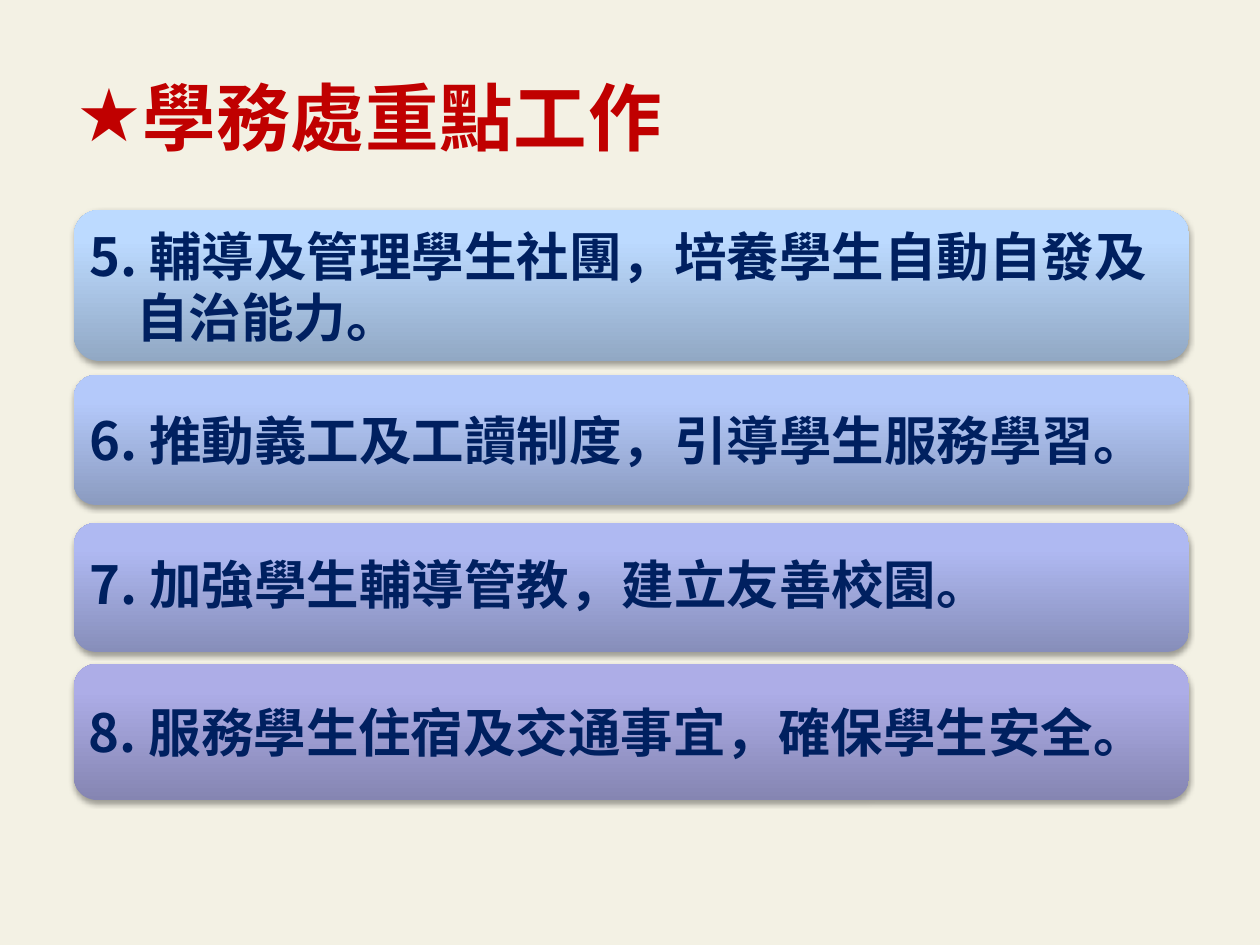
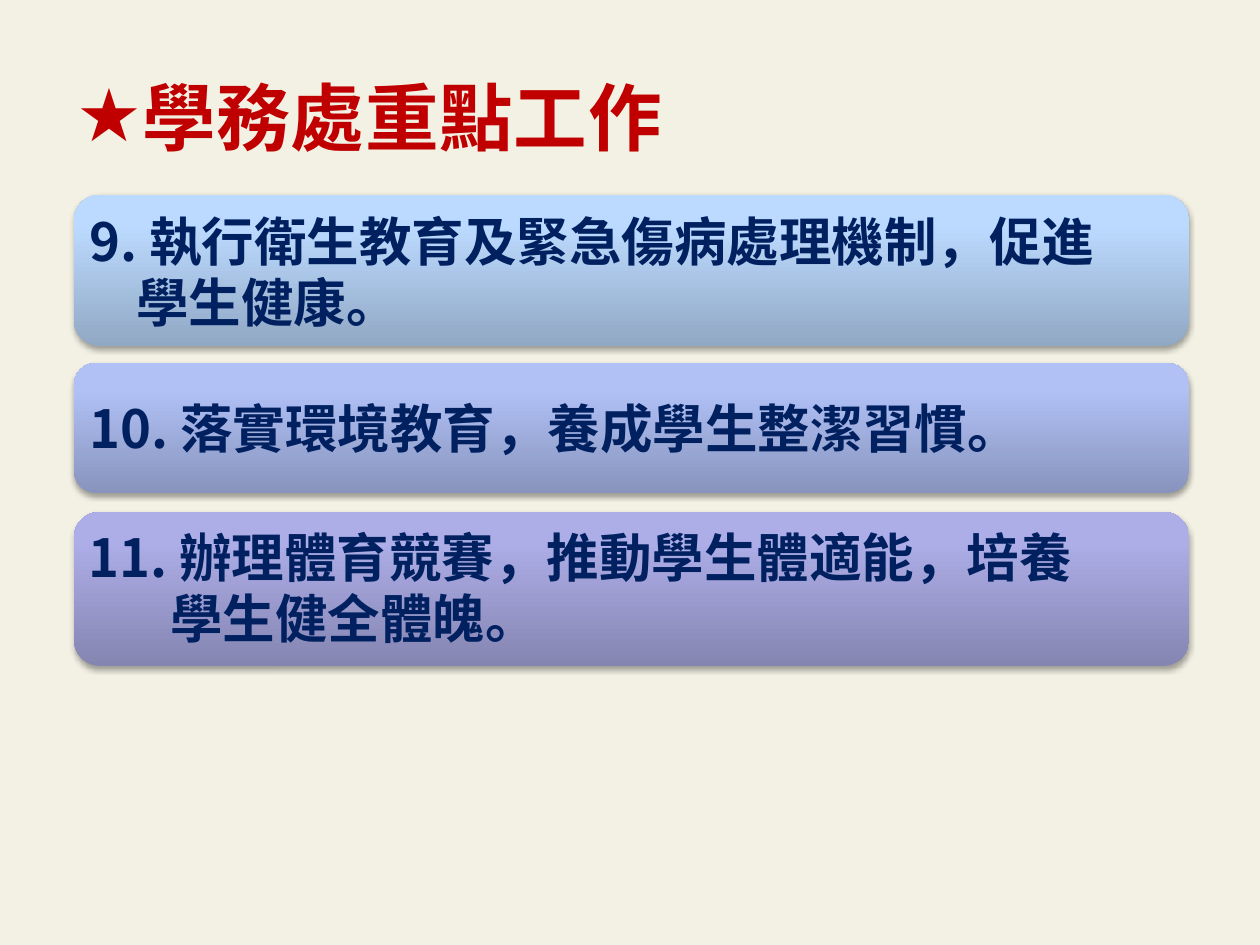
from lxml import etree
from pptx import Presentation
from pptx.dml.color import RGBColor
from pptx.enum.shapes import MSO_SHAPE
from pptx.enum.text import MSO_ANCHOR, MSO_AUTO_SIZE, PP_ALIGN
from pptx.oxml import parse_xml
from pptx.oxml.ns import nsdecls, qn
from pptx.util import Pt

ROUNDED = MSO_SHAPE.ROUNDED_RECTANGLE
TOP, MIDDLE = MSO_ANCHOR.TOP, MSO_ANCHOR.MIDDLE
LEFT = PP_ALIGN.LEFT
FIT_SHAPE = MSO_AUTO_SIZE.SHAPE_TO_FIT_TEXT

EMU_PER_PX = 914400 / 126
FONT = "Noto Sans CJK SC"
CREAM = RGBColor(0xF3, 0xF1, 0xE4)
RED = RGBColor(0xC0, 0x00, 0x00)
NAVY = RGBColor(0x00, 0x20, 0x60)
BLACK = RGBColor(0x00, 0x00, 0x00)
SKY = (RGBColor(0x91, 0xA8, 0xC4), RGBColor(0xBC, 0xDA, 0xFF), RGBColor(0xBE, 0xDB, 0xFF))
BLUE = (RGBColor(0x8B, 0x9B, 0xC0), RGBColor(0xB4, 0xC9, 0xFA), RGBColor(0xB3, 0xC9, 0xFC))
CORNFLOWER = (RGBColor(0x88, 0x94, 0xBD), RGBColor(0xB1, 0xC1, 0xF6), RGBColor(0xB0, 0xC1, 0xF8))
PERIWINKLE = (RGBColor(0x87, 0x8E, 0xBA), RGBColor(0xAF, 0xB9, 0xF2), RGBColor(0xAE, 0xB9, 0xF4))
LAVENDER = (RGBColor(0x85, 0x85, 0xB2), RGBColor(0xAD, 0xAD, 0xE7), RGBColor(0xAC, 0xAC, 0xE9))

TITLE = "學務處重點工作"
TITLE_BOX = (64, 66, 617, 102)
TITLE_HANG = 63
BAR_LEFT, BAR_WIDTH = 74, 1115
BAR_INSET = 15
CORNER_INSET = 0.049
LINE_SPACING = Pt(35)

# Each bar: top, height, gradient, lines, indent of the second line, line spacing
PAGES = [
    [
        (210, 151, SKY, ["5. 輔導及管理學生社團，培養學生自動自發及", "自治能力。"], 47, LINE_SPACING),
        (375, 130, BLUE, ["6. 推動義工及工讀制度，引導學生服務學習。"], 0, LINE_SPACING),
        (523, 129, PERIWINKLE, ["7. 加強學生輔導管教，建立友善校園。"], 0, 0.9),
        (664, 136, LAVENDER, ["8. 服務學生住宿及交通事宜，確保學生安全。"], 0, LINE_SPACING),
    ],
    [
        (195, 151, SKY, ["9. 執行衛生教育及緊急傷病處理機制，促進", "學生健康。"], 47, LINE_SPACING),
        (363, 130, CORNFLOWER, ["10. 落實環境教育，養成學生整潔習慣。"], 0, LINE_SPACING),
        (512, 154, LAVENDER, ["11. 辦理體育競賽，推動學生體適能，培養", "學生健全體魄。"], 82, LINE_SPACING),
    ],
]


def px(length):
    """Turn pixels into EMU."""
    return round(length * EMU_PER_PX)


def shadow_effect(blur, distance, opacity):
    """Return a black shadow that falls straight down, with lengths in points."""
    return parse_xml(
        f'<a:effectLst {nsdecls("a")}><a:outerShdw blurRad="{Pt(blur)}" dist="{Pt(distance)}" '
        f'dir="5400000" algn="t" rotWithShape="0"><a:srgbClr val="{BLACK}">'
        f'<a:alpha val="{opacity * 1000}"/></a:srgbClr></a:outerShdw></a:effectLst>'
    )


def gradient_fill(colours):
    """Return a vertical gradient that starts at the bottom."""
    stops = "".join(
        f'<a:gs pos="{position * 1000}"><a:srgbClr val="{colour}"/></a:gs>'
        for position, colour in zip((0, 80, 100), colours)
    )
    return parse_xml(
        f'<a:gradFill {nsdecls("a")} rotWithShape="1"><a:gsLst>{stops}</a:gsLst>'
        f'<a:lin ang="16200000" scaled="0"/></a:gradFill>'
    )


def style_run(span, size, colour):
    """Give a run the bold deck font for Latin and East Asian letters."""
    span.font.name = FONT
    span.font.size = Pt(size)
    span.font.bold = True
    span.font.color.rgb = colour
    east_asian = etree.SubElement(span.font._element, qn("a:ea"))
    east_asian.set("typeface", FONT)


def add_title(page, box):
    """Add the red starred heading with its hard shadow."""
    frame = page.shapes.add_textbox(*map(px, box)).text_frame
    frame.word_wrap = False
    frame.auto_size = FIT_SHAPE
    para = frame.paragraphs[0]
    para.text = TITLE
    properties = para._p.get_or_add_pPr()
    properties.set("marL", str(px(TITLE_HANG)))
    properties.set("indent", str(-px(TITLE_HANG)))
    etree.SubElement(properties, qn("a:buFont")).set("typeface", "Arial")
    etree.SubElement(properties, qn("a:buChar")).set("char", "★")
    span = para.runs[0]
    style_run(span, 42, RED)
    span.font._element.set("spc", "50")
    span.font._element.find(qn("a:solidFill")).addnext(shadow_effect(3, 3, 100))


def add_bar(page, top, height, colours, lines, indent, spacing):
    """Add one rounded gradient bar holding a numbered task."""
    bar = page.shapes.add_shape(ROUNDED, px(BAR_LEFT), px(top), px(BAR_WIDTH), px(height))
    bar.line.fill.background()
    outline = bar._element.spPr.find(qn("a:ln"))
    outline.addprevious(gradient_fill(colours))
    outline.addnext(shadow_effect(3.1, 1.8, 35))
    frame = bar.text_frame
    frame.word_wrap = True
    frame.vertical_anchor = TOP if len(lines) > 1 else MIDDLE
    inset = px(BAR_INSET - round(height * CORNER_INSET))
    frame.margin_left = frame.margin_right = inset
    frame.margin_top = frame.margin_bottom = inset
    for index, line in enumerate(lines):
        para = frame.add_paragraph() if index else frame.paragraphs[0]
        para.text = line
        para.alignment = LEFT
        para.line_spacing = spacing
        if index:
            para._p.get_or_add_pPr().set("marL", str(px(indent)))
        style_run(para.runs[0], 30, NAVY)


def add_task_page(deck, bars):
    """Add a page with the shared title and its task bars."""
    page = deck.slides.add_slide(deck.slide_layouts[6])
    page.background.fill.solid()
    page.background.fill.fore_color.rgb = CREAM
    add_title(page, TITLE_BOX)
    for bar in bars:
        add_bar(page, *bar)


def main():
    """Build and save the deck."""
    deck = Presentation()
    deck.slide_width, deck.slide_height = px(1260), px(945)
    for bars in PAGES:
        add_task_page(deck, bars)
    deck.save("out.pptx")


if __name__ == "__main__":
    main()
